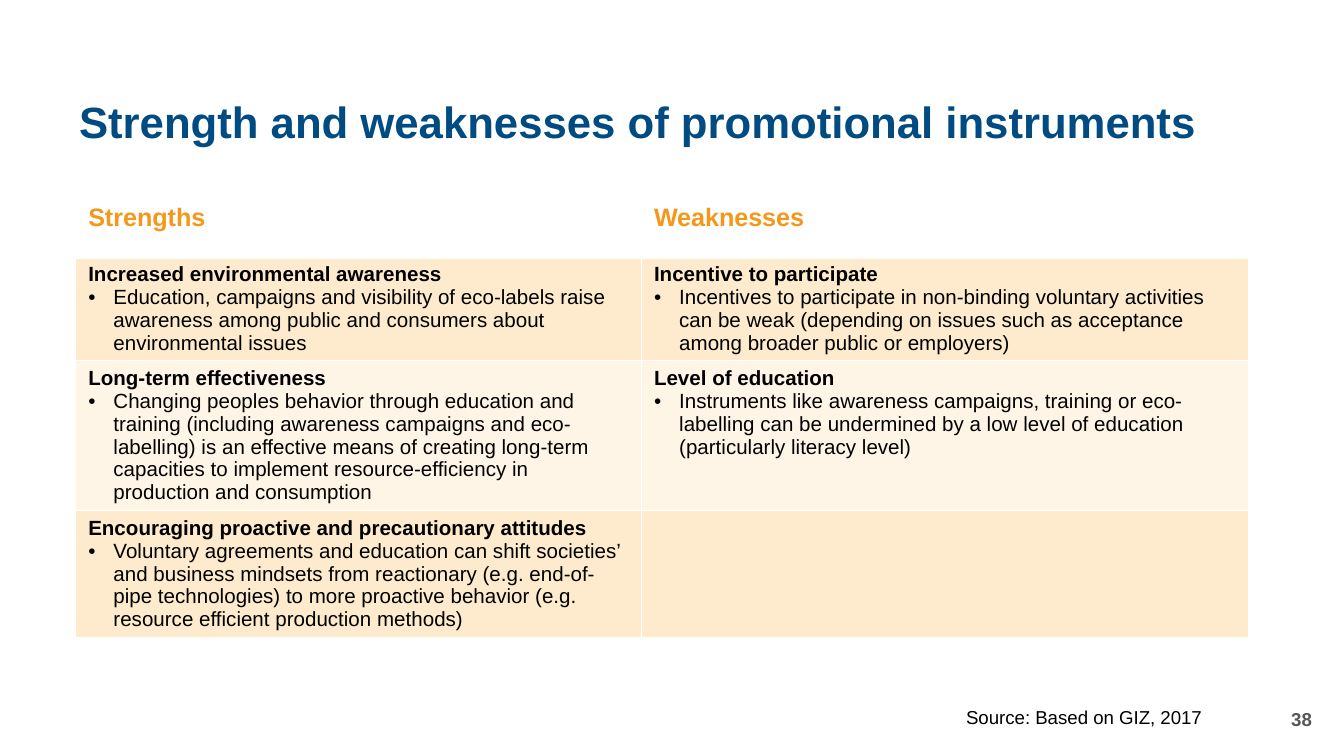
"""Build the slide on strengths and weaknesses of promotional instruments."""
from dataclasses import dataclass
from typing import Optional

import lxml.etree
import pptx
import pptx.dml.color
import pptx.enum.text
import pptx.oxml.ns
import pptx.slide
import pptx.table
import pptx.text.text
import pptx.util

Pt = pptx.util.Pt
Align = pptx.enum.text.PP_ALIGN
Anchor = pptx.enum.text.MSO_ANCHOR
AutoSize = pptx.enum.text.MSO_AUTO_SIZE


@dataclass(frozen=True)
class Style:
    size: float
    color: str
    bold: bool = False


@dataclass(frozen=True)
class Theme:
    font: str = "Arial"
    title: Style = Style(23.4, "004C82", True)
    header: Style = Style(13.5, "F4971A", True)
    heading: Style = Style(11, "000000", True)
    body: Style = Style(11, "000000")
    source: Style = Style(10, "000000")
    page_number: Style = Style(10, "575756", True)
    border: str = "FFFFFF"
    bands: tuple[str, str] = ("FEEACC", "FFF5E7")


@dataclass(frozen=True)
class Label:
    text: str
    style: Style
    frame: tuple[float, float, float, float]
    anchor: Anchor = Anchor.TOP
    align: Align = Align.LEFT
    spacing: float = 1.0
    wrap: bool = True


@dataclass(frozen=True)
class Point:
    heading: str
    detail: str


THEME = Theme()
LABELS = (
    Label("Strength and weaknesses of promotional instruments", THEME.title,
          (35.3, 45.4, 674.6, 42.5), Anchor.MIDDLE, spacing=0.9),
    Label("38", THEME.page_number, (547.9, 374.4, 162, 21.6), Anchor.MIDDLE, Align.RIGHT),
    Label("Source: Based on GIZ, 2017", THEME.source, (510.5, 374.4, 141.8, 19.4), wrap=False),
)
HEADERS = ("Strengths", "Weaknesses")
ROWS: tuple[tuple[Optional[Point], Optional[Point]], ...] = (
    (Point("Increased environmental awareness",
           "Education, campaigns and visibility of eco-labels raise awareness among public and "
           "consumers about environmental issues"),
     Point("Incentive to participate",
           "Incentives to participate in non-binding voluntary activities can be weak (depending "
           "on issues such as acceptance among broader public or employers)")),
    (Point("Long-term effectiveness",
           "Changing peoples behavior through education and training (including awareness "
           "campaigns and eco-labelling) is an effective means of creating long-term capacities "
           "to implement resource-efficiency in production and consumption"),
     Point("Level of education",
           "Instruments like awareness campaigns, training or eco-labelling can be undermined by "
           "a low level of education (particularly literacy level)")),
    (Point("Encouraging proactive and precautionary attitudes",
           "Voluntary agreements and education can shift societies’ and business mindsets from "
           "reactionary (e.g. end-of-pipe technologies) to more proactive behavior (e.g. resource "
           "efficient production methods)"),
     None),
)
TABLE_LEFT, TABLE_TOP = 40.5, 105.8
COLUMN_WIDTHS = (303.1, 325.4)
ROW_HEIGHTS = (31.7, 46.8, 59.8, 46.8)
MARGIN_X, MARGIN_Y = 6.8, 3.4
BULLET_INDENT = 13.5


def add_xml(parent: lxml.etree._Element, tag: str, **attributes: str) -> lxml.etree._Element:
    """Append a DrawingML element to a parent."""
    return lxml.etree.SubElement(parent, pptx.oxml.ns.qn(tag), attributes)


def set_font(para: pptx.text.text._Paragraph, style: Style) -> None:
    """Apply a theme style to a whole paragraph."""
    font = para.font
    font.name = THEME.font
    font.size = Pt(style.size)
    font.bold = style.bold
    font.color.rgb = pptx.dml.color.RGBColor.from_string(style.color)


def add_bullet(para: pptx.text.text._Paragraph) -> None:
    """Give a paragraph a hanging bullet."""
    properties = para._p.get_or_add_pPr()
    properties.set("marL", str(Pt(BULLET_INDENT)))
    properties.set("indent", str(-Pt(BULLET_INDENT)))
    add_xml(properties, "a:buFont", typeface=THEME.font)
    add_xml(properties, "a:buChar", char="•")


def add_label(slide: pptx.slide.Slide, label: Label) -> None:
    """Place one text box on the slide."""
    box = slide.shapes.add_textbox(*map(Pt, label.frame))
    frame = box.text_frame
    frame.word_wrap = label.wrap
    frame.auto_size = AutoSize.NONE if label.wrap else AutoSize.SHAPE_TO_FIT_TEXT
    frame.vertical_anchor = label.anchor
    para = frame.paragraphs[0]
    para.text = label.text
    para.alignment = label.align
    para.line_spacing = label.spacing
    set_font(para, label.style)


def style_cell(cell: pptx.table._Cell, row: int) -> None:
    """Set the margins, borders and band fill of a cell."""
    cell.margin_left = cell.margin_right = Pt(MARGIN_X)
    cell.margin_top = cell.margin_bottom = Pt(MARGIN_Y)
    widths = {"L": 1, "R": 1, "T": 3 if row == 1 else 1, "B": 3 if row == 0 else 1}
    for side, width in widths.items():
        line = add_xml(cell._tc.get_or_add_tcPr(), f"a:ln{side}", w=str(Pt(width)))
        add_xml(add_xml(line, "a:solidFill"), "a:srgbClr", val=THEME.border)
    if row == 0:
        cell.fill.background()
    else:
        cell.fill.solid()
        color = THEME.bands[(row - 1) % len(THEME.bands)]
        cell.fill.fore_color.rgb = pptx.dml.color.RGBColor.from_string(color)


def fill_point(cell: pptx.table._Cell, point: Optional[Point]) -> None:
    """Write a heading and its bulleted detail into a cell."""
    heading = cell.text_frame.paragraphs[0]
    if point:
        heading.text = point.heading
        detail = cell.text_frame.add_paragraph()
        detail.text = point.detail
        add_bullet(detail)
        set_font(detail, THEME.body)
    set_font(heading, THEME.heading)


def add_comparison(slide: pptx.slide.Slide) -> None:
    """Draw the table of strengths and weaknesses."""
    table = slide.shapes.add_table(
        len(ROW_HEIGHTS), len(COLUMN_WIDTHS), Pt(TABLE_LEFT), Pt(TABLE_TOP),
        Pt(sum(COLUMN_WIDTHS)), Pt(sum(ROW_HEIGHTS))).table
    for column, width in zip(table.columns, COLUMN_WIDTHS):
        column.width = Pt(width)
    for index, height in enumerate(ROW_HEIGHTS):
        table.rows[index].height = Pt(height)
        for cell in table.rows[index].cells:
            style_cell(cell, index)
    for column, header in enumerate(HEADERS):
        para = table.cell(0, column).text_frame.paragraphs[0]
        para.text = header
        set_font(para, THEME.header)
    for row, points in enumerate(ROWS, start=1):
        for column, point in enumerate(points):
            fill_point(table.cell(row, column), point)


def main() -> None:
    """Create and save the deck."""
    deck = pptx.Presentation()
    deck.slide_width, deck.slide_height = Pt(720), Pt(405)
    slide = deck.slides.add_slide(deck.slide_layouts[6])
    add_comparison(slide)
    for label in LABELS:
        add_label(slide, label)
    deck.save("out.pptx")


if __name__ == "__main__":
    main()
